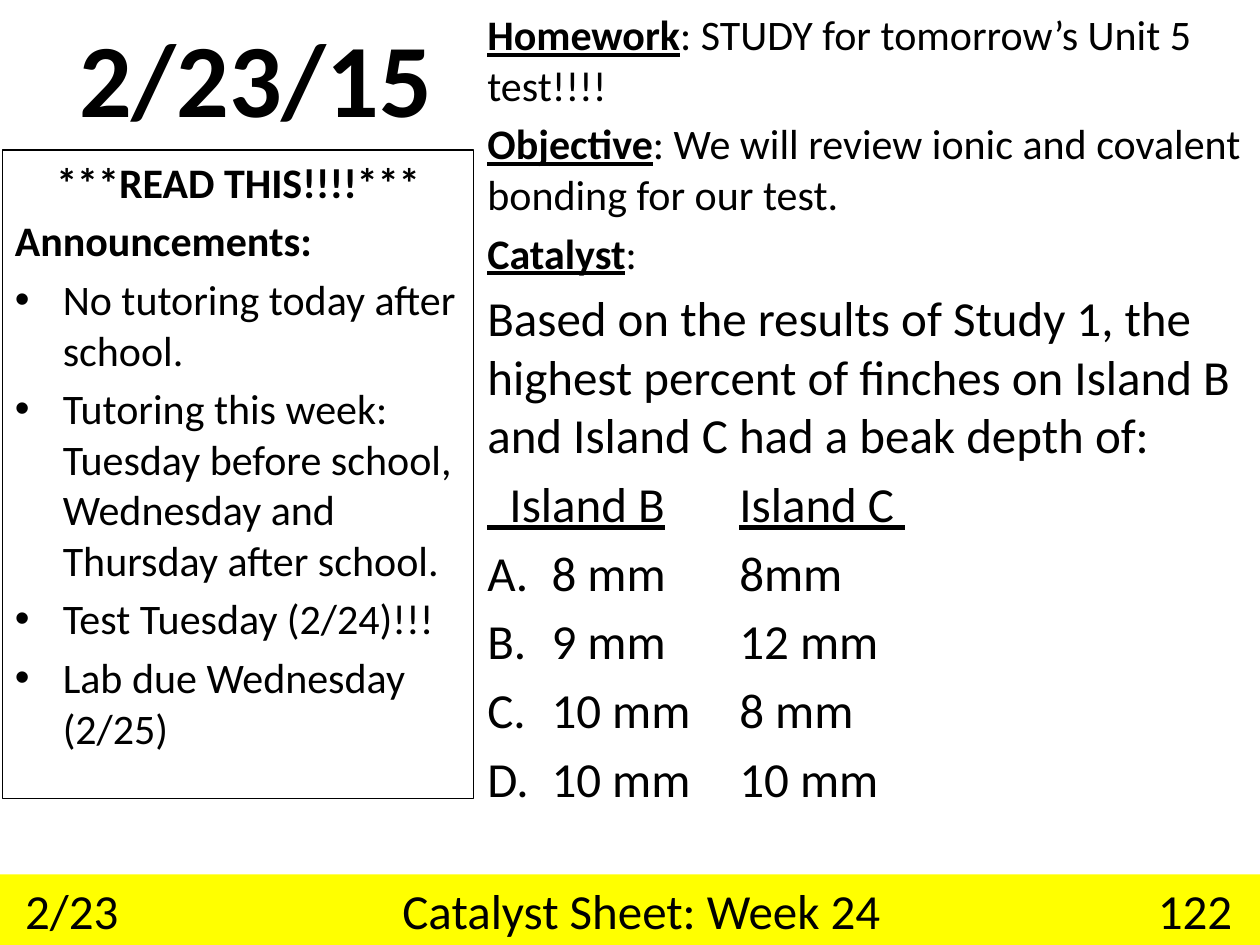
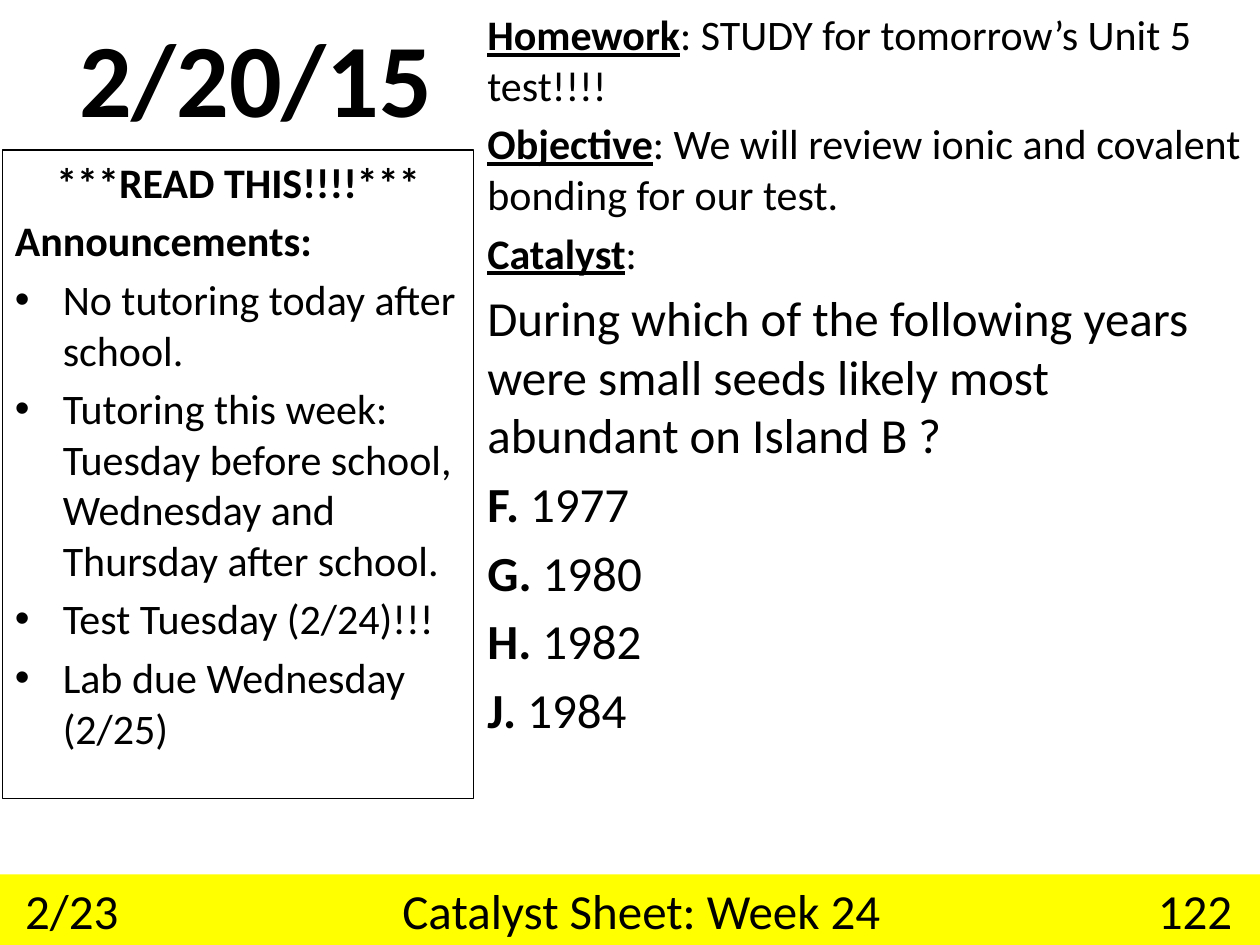
from lxml.etree import SubElement
from pptx import Presentation
from pptx.dml.color import RGBColor
from pptx.enum.shapes import MSO_SHAPE
from pptx.enum.text import MSO_ANCHOR, PP_ALIGN
from pptx.oxml.ns import qn
from pptx.util import Inches, Pt

BLACK = RGBColor(0, 0, 0)
YELLOW = RGBColor(255, 255, 0)
FONT = "Calibri"
TITLE_SIZE, NOTE_SIZE, QUESTION_SIZE = 59.4, 24, 28
BULLET_INDENT = 0.38
ANSWER_TABS = [(0.51, "l"), (2, "l")]
FOOTER_TABS = [(4.89, "ctr"), (9.58, "r")]

ANNOUNCEMENTS = [
    "No tutoring today after school.",
    "Tutoring this week: Tuesday before school, Wednesday and Thursday after school.",
    "Test Tuesday (2/24)!!!",
    "Lab due Wednesday (2/25)",
]
AGENDA = [
    ("Homework", ": STUDY for tomorrow’s Unit 5 test!!!!"),
    ("Objective", ": We will review ionic and covalent bonding for our test."),
    ("Catalyst", ":"),
]
BEAK_QUESTION = ("Based on the results of Study 1, the highest percent of finches "
                 "on Island B and Island C had a beak depth of:")
BEAK_DEPTHS = [("A.", "8 mm", "8mm"), ("B.", "9 mm", "12 mm"),
               ("C.", "10 mm", "8 mm"), ("D.", "10 mm", "10 mm")]
SEED_QUESTION = ("During which of the following years were small seeds likely most "
                 "abundant on Island B ?")
SEED_YEARS = [("F. ", "1977"), ("G. ", "1980"), ("H. ", "1982"), ("J. ", "1984")]


def add_run(paragraph, text, size=NOTE_SIZE, bold=False, underline=False):
    run = paragraph.add_run()
    run.text = text
    font = run.font
    font.name, font.size = FONT, Pt(size)
    font.bold, font.underline = bold, underline
    font.color.rgb = BLACK


def add_paragraph(frame, size=NOTE_SIZE, align=PP_ALIGN.LEFT, spaced=True):
    first = frame.paragraphs[0]
    paragraph = frame.add_paragraph() if first.runs else first
    paragraph.alignment = align
    if spaced:
        paragraph.space_before = Pt(0.2 * size)
    return paragraph


def add_bullet(paragraph):
    properties = paragraph._p.get_or_add_pPr()
    properties.set("marL", str(Inches(BULLET_INDENT)))
    properties.set("indent", str(-Inches(BULLET_INDENT)))
    SubElement(properties, qn("a:buFont"), typeface="Arial")
    SubElement(properties, qn("a:buChar"), char="•")


def add_tabs(paragraph, stops):
    tab_list = SubElement(paragraph._p.get_or_add_pPr(), qn("a:tabLst"))
    for position, align in stops:
        SubElement(tab_list, qn("a:tab"), pos=str(Inches(position)), algn=align)


def add_text_box(slide, left, top, width, height, anchor=MSO_ANCHOR.TOP):
    box = slide.shapes.add_textbox(Inches(left), Inches(top), Inches(width), Inches(height))
    box.text_frame.word_wrap = True
    box.text_frame.vertical_anchor = anchor
    return box


def add_date_title(slide, date):
    frame = add_text_box(slide, -0.47, 0.02, 5, 1.17, MSO_ANCHOR.MIDDLE).text_frame
    paragraph = add_paragraph(frame, align=PP_ALIGN.CENTER, spaced=False)
    add_run(paragraph, date, size=TITLE_SIZE, bold=True)


def add_announcements(slide):
    box = add_text_box(slide, 0.02, 1.19, 3.74, 5.15)
    box.line.color.rgb = BLACK
    box.line.width = Pt(0.75)
    frame = box.text_frame
    add_run(add_paragraph(frame, align=PP_ALIGN.CENTER), "***READ THIS!!!!***", bold=True)
    add_run(add_paragraph(frame), "Announcements:", bold=True)
    for announcement in ANNOUNCEMENTS:
        paragraph = add_paragraph(frame)
        add_run(paragraph, announcement)
        add_bullet(paragraph)


def add_agenda(slide, question):
    frame = add_text_box(slide, 3.77, 0.02, 6.23, 6.92).text_frame
    for label, detail in AGENDA:
        paragraph = add_paragraph(frame)
        add_run(paragraph, label, bold=True, underline=True)
        add_run(paragraph, detail)
    add_run(add_paragraph(frame, QUESTION_SIZE), question, size=QUESTION_SIZE)
    return frame


def add_beak_answers(frame):
    header = add_paragraph(frame, QUESTION_SIZE)
    add_run(header, "  Island B", size=QUESTION_SIZE, underline=True)
    add_run(header, "\t", size=QUESTION_SIZE)
    add_run(header, "Island C ", size=QUESTION_SIZE, underline=True)
    add_tabs(header, ANSWER_TABS[1:])
    for answer in BEAK_DEPTHS:
        paragraph = add_paragraph(frame, QUESTION_SIZE)
        add_run(paragraph, "\t".join(answer), size=QUESTION_SIZE)
        add_tabs(paragraph, ANSWER_TABS)


def add_seed_answers(frame):
    for letter, year in SEED_YEARS:
        paragraph = add_paragraph(frame, QUESTION_SIZE)
        add_run(paragraph, letter, size=QUESTION_SIZE, bold=True)
        add_run(paragraph, year, size=QUESTION_SIZE)


def add_footer(slide):
    band = slide.shapes.add_shape(MSO_SHAPE.RECTANGLE, Inches(0), Inches(6.94),
                                  Inches(10), Inches(0.56))
    band.shadow.inherit = False
    band.fill.solid()
    band.fill.fore_color.rgb = YELLOW
    band.line.fill.background()
    frame = band.text_frame
    frame.word_wrap = True
    frame.vertical_anchor = MSO_ANCHOR.MIDDLE
    frame.margin_left = Inches(0.2)
    paragraph = add_paragraph(frame, spaced=False)
    add_run(paragraph, "2/23\tCatalyst Sheet: Week 24\t122", size=QUESTION_SIZE)
    add_tabs(paragraph, FOOTER_TABS)


def add_catalyst_slide(presentation, date, question, add_answers):
    slide = presentation.slides.add_slide(presentation.slide_layouts[6])
    add_date_title(slide, date)
    add_announcements(slide)
    add_answers(add_agenda(slide, question))
    add_footer(slide)


def main():
    presentation = Presentation()
    presentation.slide_width = Inches(10)
    presentation.slide_height = Inches(7.5)
    add_catalyst_slide(presentation, "2/23/15", BEAK_QUESTION, add_beak_answers)
    add_catalyst_slide(presentation, "2/20/15", SEED_QUESTION, add_seed_answers)
    presentation.save("out.pptx")


if __name__ == "__main__":
    main()
